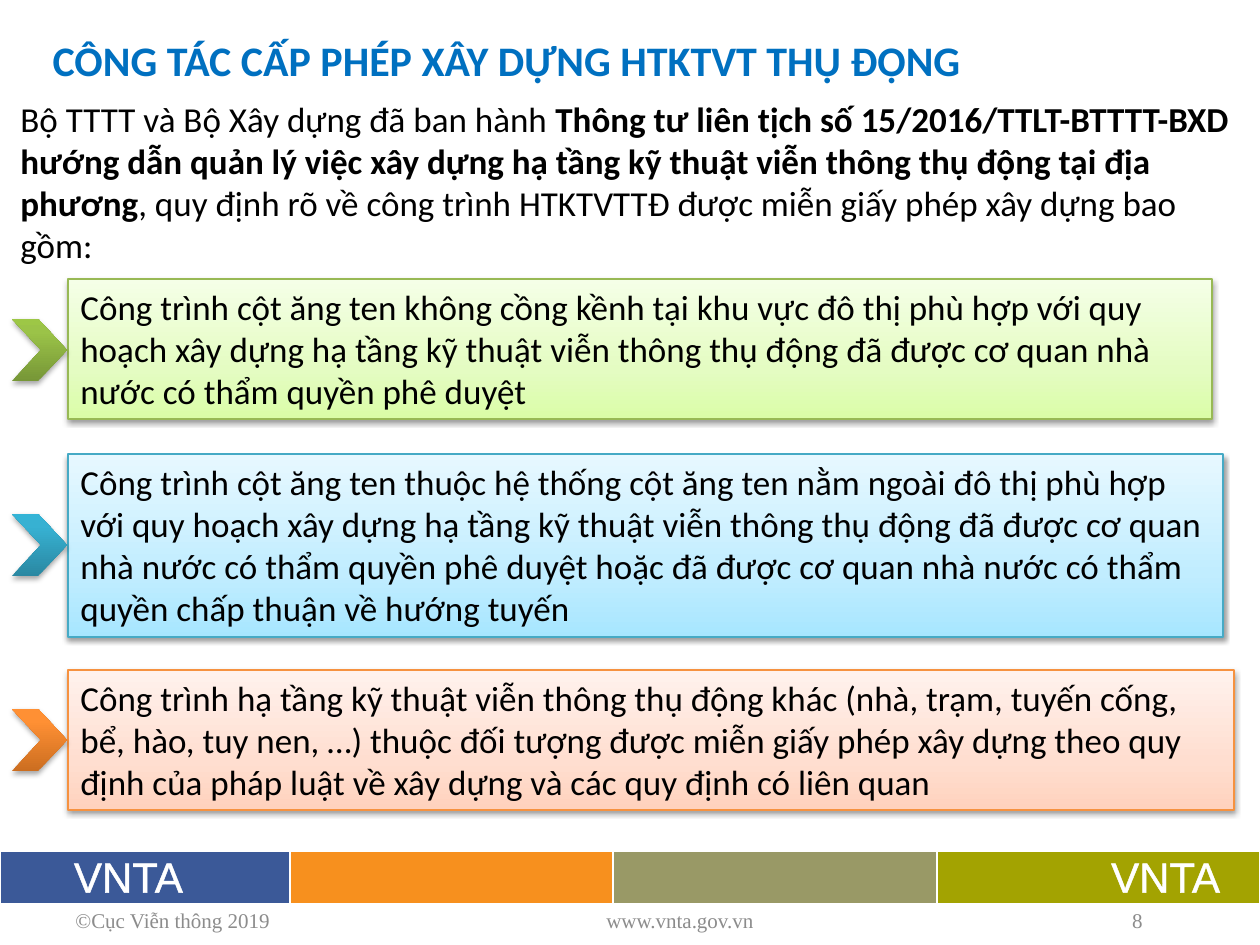
from lxml.etree import SubElement as Sub
from pptx import Presentation
from pptx.dml.color import RGBColor as Rgb
from pptx.enum.shapes import MSO_SHAPE as Kind
from pptx.enum.text import MSO_ANCHOR as Anc, MSO_AUTO_SIZE as Auto, PP_ALIGN as Al
from pptx.oxml.ns import qn
from pptx.util import Pt

HUES = {
    "title": "0070C0", "ink": "000000", "foot": "8C8C8C", "white": "FFFFFF",
    "navy": "3B5998", "amber": "F7901E", "khaki": "999966", "olive": "A3A301",
    "green": "98B955", "blue": "46AAC5", "orange": "F69240",
}
BOXES = {
    "green": ["DAFDA7", "E4FCC2", "F5FFE7"],
    "blue": ["A7E6FF", "C1EDFF", "E7F8FF"],
    "orange": ["FFD2BD", "FFDED0", "FFF2ED"],
}
MARKS = {
    "green": ["779737", "9BC348", "9DC746"],
    "blue": ["2A88A2", "37B1D2", "34B4D6"],
    "orange": ["CC6E20", "FF9034", "FF9136"],
}


class Deck:
    scale = 914400 / 126
    main, foot, band = "Calibri", "Times New Roman", "Arial"

    def __init__(self):
        self.pres = Presentation()
        self.pres.slide_width, self.pres.slide_height = self.emu(1260, 945)
        self.slide = self.pres.slides.add_slide(self.pres.slide_layouts[5])
        self.shapes = self.slide.shapes

    def emu(self, *px):
        return [round(n * self.scale) for n in px]

    def put(self, item, form):
        for key, val in form.items():
            setattr(item, key, val)

    def color(self, hue):
        return Rgb.from_string(HUES[hue])

    def words(self, frame, runs, form, hue, par, box):
        self.put(frame, {"word_wrap": True, **box})
        line = frame.paragraphs[0]
        self.put(line, par)
        for text, bold in runs:
            run = line.add_run()
            run.text = text
            self.put(run.font, {"bold": bold, **form})
            run.font.color.rgb = self.color(hue)
        return line

    def title(self, text, area):
        head = self.shapes.title
        self.put(head, dict(zip(("left", "top", "width", "height"), self.emu(*area))))
        self.words(head.text_frame, [(text, True)], {"name": self.main, "size": Pt(24)},
                   "title", {"alignment": Al.LEFT},
                   {"vertical_anchor": Anc.BOTTOM, "auto_size": Auto.NONE})

    def intro(self, runs, area):
        body = self.shapes.add_textbox(*self.emu(*area))
        self.words(body.text_frame, runs, {"name": self.main, "size": Pt(20)},
                   "ink", {"space_before": Pt(6)}, {"auto_size": Auto.SHAPE_TO_FIT_TEXT})

    def note(self, text, area, align):
        body = self.shapes.add_textbox(*self.emu(*area))
        self.words(body.text_frame, [(text, False)], {"name": self.foot, "size": Pt(12)},
                   "foot", {"alignment": align}, {"vertical_anchor": Anc.MIDDLE})

    def shade(self, shape, stops, fade, dist):
        shape.fill.gradient()
        shape.fill.gradient_angle = 90
        props = shape._element.spPr
        grad = props.find(qn("a:gradFill"))
        group = grad.find(qn("a:gsLst"))
        for old in list(group):
            group.remove(old)
        for pos, hue in stops:
            stop = Sub(group, qn("a:gs"), pos=str(pos * 1000))
            Sub(stop, qn("a:srgbClr"), val=hue)
        shape.shadow.inherit = False
        cast = Sub(props.find(qn("a:effectLst")), qn("a:outerShdw"), blurRad="40000",
                   dist=str(dist), dir="5400000", rotWithShape="0")
        tone = Sub(cast, qn("a:srgbClr"), val=HUES["ink"])
        Sub(tone, qn("a:alpha"), val=str(fade * 1000))

    def box(self, text, hue, area):
        shape = self.shapes.add_shape(Kind.RECTANGLE, *self.emu(*area))
        shape.line.color.rgb = self.color(hue)
        shape.line.width = Pt(0.75)
        self.shade(shape, zip((0, 35, 100), BOXES[hue]), 38, 20000)
        self.words(shape.text_frame, [(text, False)], {"name": self.main, "size": Pt(20)},
                   "ink", {"alignment": Al.LEFT},
                   {"vertical_anchor": Anc.TOP, "auto_size": Auto.SHAPE_TO_FIT_TEXT})

    def mark(self, hue, area):
        shape = self.shapes.add_shape(Kind.CHEVRON, *self.emu(*area))
        shape.adjustments[0] = 0.525
        shape.line.fill.background()
        self.shade(shape, zip((0, 80, 100), MARKS[hue]), 35, 23000)

    def edge(self, cell):
        props = cell._tc.get_or_add_tcPr()
        for at, (side, wide) in enumerate((("L", 1), ("R", 1), ("T", 1), ("B", 3))):
            line = Sub(props, qn("a:ln" + side), w=str(Pt(wide)))
            Sub(Sub(line, qn("a:solidFill")), qn("a:srgbClr"), val=HUES["white"])
            props.insert(at, line)

    def strip(self, cells, area):
        table = self.shapes.add_table(1, len(cells), *self.emu(*area)).table
        self.put(table, {"first_row": False, "horz_banding": False})
        for col, (wide, hue, text, align, left, right) in enumerate(cells):
            table.columns[col].width = self.emu(wide)[0]
            cell = table.cell(0, col)
            cell.fill.solid()
            cell.fill.fore_color.rgb = self.color(hue)
            sides = self.emu(left, right, 0, 0)
            self.put(cell, dict(zip(("margin_left", "margin_right", "margin_top",
                                     "margin_bottom"), sides)))
            cell.vertical_anchor = Anc.MIDDLE
            self.edge(cell)
            if text:
                line = self.words(cell.text_frame, [(text, False)],
                                  {"name": self.band, "size": Pt(24)},
                                  "white", {"alignment": align}, {})
                props = line.runs[0].font._element
                rim = Sub(props, qn("a:ln"), w=str(Pt(1.45)))
                Sub(Sub(rim, qn("a:solidFill")), qn("a:srgbClr"), val=HUES["white"])
                props.insert(0, rim)


def main():
    deck = Deck()
    deck.strip([
        (290, "navy", "VNTA", Al.LEFT, 74, 9),
        (323, "amber", "", Al.LEFT, 9, 9),
        (324, "khaki", "", Al.LEFT, 9, 9),
        (323, "olive", "VNTA", Al.RIGHT, 9, 40),
    ], (0, 851, 1260, 54))
    for text, left, wide, align in (
        ("©Cục Viễn thông 2019", 63, 365, Al.LEFT),
        ("www.vnta.gov.vn", 554, 252, Al.CENTER),
        ("8", 903, 252, Al.RIGHT),
    ):
        deck.note(text, (left, 895, wide, 50), align)
    deck.title("CÔNG TÁC CẤP PHÉP XÂY DỰNG HTKTVT THỤ ĐỘNG", (40, 0, 1134, 91))
    deck.intro([
        ("Bộ TTTT và Bộ Xây dựng đã ban hành ", False),
        ("Thông tư liên tịch số 15/2016/TTLT-BTTTT-BXD hướng dẫn quản lý việc xây dựng "
         "hạ tầng kỹ thuật viễn thông thụ động tại địa phương", True),
        (", quy định rõ về công trình HTKTVTTĐ được miễn giấy phép xây dựng bao gồm:", False),
    ], (8, 91, 1252, 183))
    for hue, top, wide, high, text in (
        ("green", 279, 1144, 140,
         "Công trình cột ăng ten không cồng kềnh tại khu vực đô thị phù hợp với quy hoạch "
         "xây dựng hạ tầng kỹ thuật viễn thông thụ động đã được cơ quan nhà nước có thẩm "
         "quyền phê duyệt"),
        ("blue", 454, 1155, 183,
         "Công trình cột ăng ten thuộc hệ thống cột ăng ten nằm ngoài đô thị phù hợp với "
         "quy hoạch xây dựng hạ tầng kỹ thuật viễn thông thụ động đã được cơ quan nhà nước "
         "có thẩm quyền phê duyệt hoặc đã được cơ quan nhà nước có thẩm quyền chấp thuận "
         "về hướng tuyến"),
        ("orange", 670, 1166, 140,
         "Công trình hạ tầng kỹ thuật viễn thông thụ động khác (nhà, trạm, tuyến cống, bể, "
         "hào, tuy nen, …) thuộc đối tượng được miễn giấy phép xây dựng theo quy định của "
         "pháp luật về xây dựng và các quy định có liên quan"),
    ):
        deck.box(text, hue, (68, top, wide, high))
    for row, hue in enumerate(MARKS):
        deck.mark(hue, (12, 319 + 195 * row, 55, 62))
    deck.pres.save("out.pptx")


if __name__ == "__main__":
    main()
